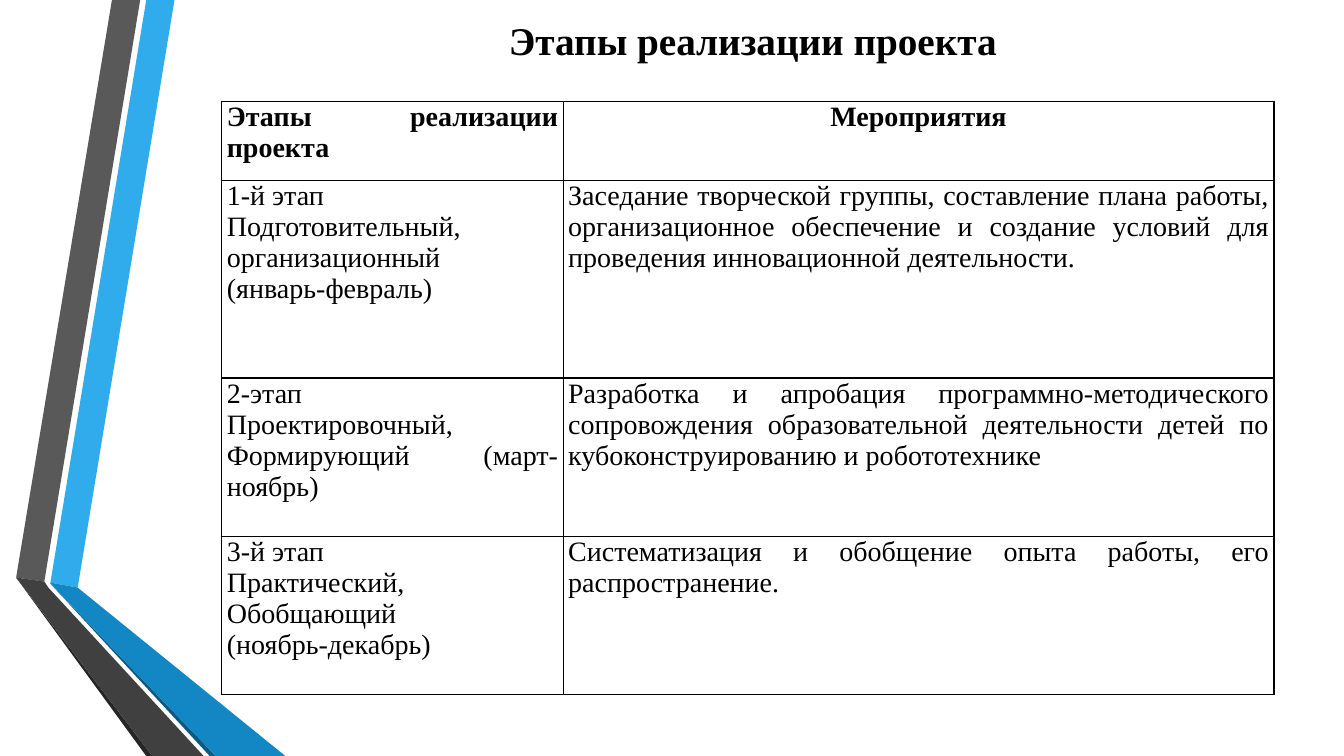
from pptx import Presentation
from pptx.dml.color import RGBColor
from pptx.enum.text import PP_ALIGN
from pptx.oxml import parse_xml
from pptx.oxml.ns import nsdecls
from pptx.util import Inches, Pt

deck = Presentation()
deck.slide_width, deck.slide_height = Inches(13.33), Inches(7.5)
# One column and one row are each 1% of the slide
col, row = deck.slide_width / 100, deck.slide_height / 100
slide = deck.slides.add_slide(deck.slide_layouts[6])


def tint(code):
    return RGBColor.from_string(code)


def write(frame, text, size=20, bold=False, align=PP_ALIGN.JUSTIFY):
    frame.word_wrap = True
    frame.text = text
    for para in frame.paragraphs:
        para.alignment = align
        for run in para.runs:
            run.font.name = "Times New Roman"
            run.font.size = Pt(size)
            run.font.bold = bold
            run.font.color.rgb = tint("000000")


# Folded ribbons on the left: fill, then corners in columns and rows
ribbons = [
    ("30ACEC", [(3.75, 77.07), (5.78, 77.73), (12.98, 0), (10.88, 0)]),
    ("595959", [(10.43, 0), (8.33, 0), (1.2, 76.4), (3.3, 76.93)]),
    ("262626", [(1.2, 76.4), (10.88, 100), (11.33, 100)]),
    ("0C5A82", [(3.75, 77.2), (15.6, 100), (16.05, 100)]),
    ("1287C3", [(3.75, 77.2), (16.05, 100), (21.23, 100),
                (5.78, 77.73), (3.75, 77.07)]),
    ("404040", [(15.15, 100), (3.6, 77.73), (3.3, 76.93),
                (1.2, 76.4), (11.33, 100)]),
]
for fill, corners in ribbons:
    spots = [(round(x * col), round(y * row)) for x, y in corners]
    pen = slide.shapes.build_freeform(*spots[0])
    pen.add_line_segments(spots[1:], close=True)
    ribbon = pen.convert_to_shape()
    ribbon.shadow.inherit = False
    ribbon.fill.solid()
    ribbon.fill.fore_color.rgb = tint(fill)
    ribbon.line.fill.background()

# Title
title = slide.shapes.add_textbox(
    round(37.13 * col), round(1.47 * row), round(38.71 * col), round(7.6 * row))
write(title.text_frame, "Этапы реализации проекта",
      size=28, bold=True, align=PP_ALIGN.LEFT)

# Table of stages
stages = [
    ("Этапы реализации проекта", "Мероприятия"),
    ("1-й этап\nПодготовительный, организационный\n(январь-февраль)",
     "Заседание творческой группы, составление плана работы, организационное "
     "обеспечение и создание условий для проведения инновационной деятельности."),
    ("2-этап\nПроектировочный,\nФормирующий (март-ноябрь)",
     "Разработка и апробация программно-методического сопровождения "
     "образовательной деятельности детей по кубоконструированию и робототехнике"),
    ("3-й этап\nПрактический,\nОбобщающий\n(ноябрь-декабрь)",
     "Систематизация и обобщение опыта работы, его распространение."),
]
widths = [25.4, 52.9]
heights = [10.5, 26.1, 20.95, 20.95]
table = slide.shapes.add_table(
    len(heights), len(widths), round(16.5 * col), round(13.4 * row),
    round(sum(widths) * col), round(sum(heights) * row)).table
table.first_row = table.horz_banding = False
for band, width in zip(table.columns, widths):
    band.width = round(width * col)
for band, height in zip(table.rows, heights):
    band.height = round(height * row)

for r, stage in enumerate(stages):
    for c, text in enumerate(stage):
        cell = table.cell(r, c)
        cell.margin_left = cell.margin_right = Inches(0.05)
        cell.margin_top = cell.margin_bottom = 0
        head = r == 0
        write(cell.text_frame, text, bold=head,
              align=PP_ALIGN.CENTER if head and c else PP_ALIGN.JUSTIFY)
        # Black borders come before the fill in the cell's XML
        for side in ("lnL", "lnR", "lnT", "lnB"):
            cell._tc.get_or_add_tcPr().append(parse_xml(
                f'<a:{side} {nsdecls("a")} w="{Pt(1)}"><a:solidFill>'
                f'<a:srgbClr val="000000"/></a:solidFill></a:{side}>'))
        cell.fill.background()

deck.save("out.pptx")
